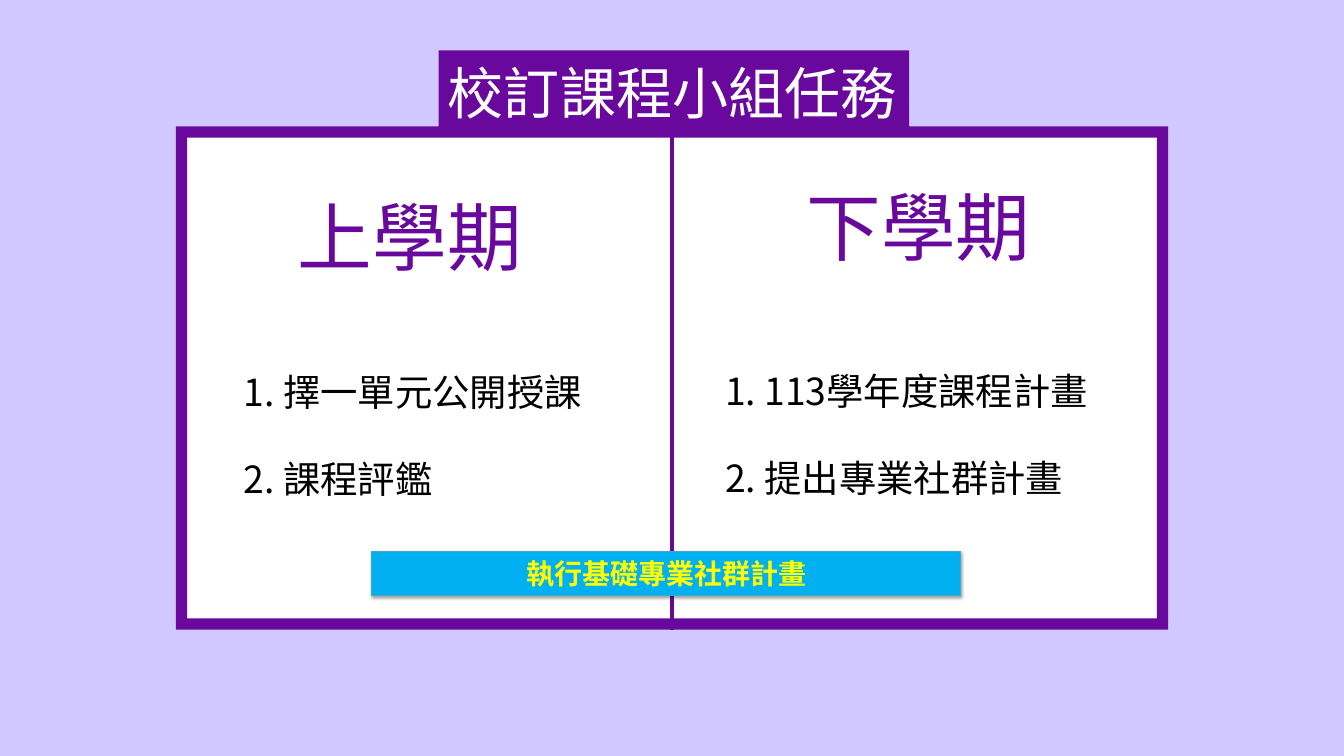
from lxml.etree import SubElement
from pptx import Presentation
from pptx.dml.color import RGBColor
from pptx.enum.shapes import MSO_CONNECTOR, MSO_SHAPE as Shape
from pptx.enum.text import MSO_ANCHOR as Anchor, PP_ALIGN as Align
from pptx.oxml import parse_xml
from pptx.oxml.ns import nsdecls, qn
from pptx.util import Pt

LILAC = RGBColor(0xD0, 0xC8, 0xFF)
PURPLE = RGBColor(0x69, 0x08, 0x9D)
WHITE = RGBColor(0xFF, 0xFF, 0xFF)
BLACK = RGBColor(0, 0, 0)
SKY = RGBColor(0x00, 0xB0, 0xF0)
TEAL = RGBColor(0x45, 0xA9, 0xC4)
YELLOW = RGBColor(0xFF, 0xFF, 0x00)
CJK = "Noto Sans CJK TC"

TITLE = "校訂課程小組任務"
SHARED_TASK = "執行基礎專業社群計畫"
SEMESTERS = [
    {"name": "上學期", "name_at": (319, 242), "tasks_at": (261.4, 395),
     "tasks": ["1. 擇一單元公開授課", "2. 課程評鑑"]},
    {"name": "下學期", "name_at": (864, 232), "tasks_at": (777, 394),
     "tasks": ["1. 113學年度課程計畫", "2. 提出專業社群計畫"]},
]

WIDTH, HEIGHT = 1440, 810
FRAME_WIDTH, FRAME_HEIGHT, FRAME_TOP, BORDER = 1063, 539, 135.5, 12
FRAME_LEFT = (WIDTH - FRAME_WIDTH) / 2

SHADOW = f"""<a:effectLst {nsdecls('a')}>
<a:outerShdw blurRad="39370" dist="20320" dir="5400000" rotWithShape="0">
<a:srgbClr val="000000"><a:alpha val="37000"/></a:srgbClr>
</a:outerShdw></a:effectLst>"""


def write(shape, lines, size, color, font=CJK, bold=False, align=Align.LEFT,
          anchor=Anchor.TOP, spacing=1.0, gap=0, margins=(0, 0)):
    frame = shape.text_frame
    frame.word_wrap = True
    frame.vertical_anchor = anchor
    frame.margin_left = frame.margin_right = Pt(margins[0])
    frame.margin_top = frame.margin_bottom = Pt(margins[1])
    for index, line in enumerate(lines):
        para = frame.add_paragraph() if index else frame.paragraphs[0]
        para.alignment = align
        para.line_spacing = spacing
        para.space_before = Pt(gap if index else 0)
        span = para.add_run()
        span.text = line
        span.font.size = Pt(size)
        span.font.bold = bold
        span.font.name = font
        span.font.color.rgb = color
        SubElement(span.font._element, qn("a:ea"), typeface=font)


def add_box(page, left, top, width, height):
    return page.shapes.add_textbox(Pt(left), Pt(top), Pt(width), Pt(height))


def add_block(page, kind, left, top, width, height, fill):
    block = page.shapes.add_shape(kind, Pt(left), Pt(top), Pt(width), Pt(height))
    block.shadow.inherit = False
    block.fill.solid()
    block.fill.fore_color.rgb = fill
    block.line.fill.background()
    return block


def add_divider(page, frame):
    divider = page.shapes.add_connector(MSO_CONNECTOR.STRAIGHT, 0, 0, 0, 0)
    divider.begin_connect(frame, 0)
    divider.end_connect(frame, 2)
    divider.line.color.rgb = PURPLE
    divider.line.width = Pt(5.25)
    SubElement(divider._element.spPr, qn("a:effectLst"))


def add_banner(page):
    banner = add_block(page, Shape.RECTANGLE, 398, 590.4, 631.5, 47.5, SKY)
    banner.line.color.rgb = TEAL
    banner.line.width = Pt(0.75)
    properties = banner._element.spPr
    properties.replace(properties.find(qn("a:effectLst")), parse_xml(SHADOW))
    write(banner, [SHARED_TASK], 30, YELLOW, font="Arial", bold=True,
          align=Align.CENTER, anchor=Anchor.MIDDLE, margins=(7.2, 3.6))


def main():
    deck = Presentation()
    deck.slide_width, deck.slide_height = Pt(WIDTH), Pt(HEIGHT)
    page = deck.slides.add_slide(deck.slide_layouts[6])
    page.background.fill.solid()
    page.background.fill.fore_color.rgb = LILAC

    add_block(page, Shape.RECTANGLE, FRAME_LEFT + BORDER / 2, FRAME_TOP + BORDER / 2,
              FRAME_WIDTH - BORDER, FRAME_HEIGHT - BORDER, WHITE)
    frame = add_block(page, Shape.FRAME, FRAME_LEFT, FRAME_TOP,
                      FRAME_WIDTH, FRAME_HEIGHT, PURPLE)
    frame.adjustments[0] = BORDER / FRAME_HEIGHT
    add_block(page, Shape.RECTANGLE, 470, 54, 504, 83, PURPLE)
    add_divider(page, frame)

    write(add_box(page, 435.6, 36, 568.8, 126), [TITLE], 60, WHITE,
          align=Align.CENTER, anchor=Anchor.MIDDLE, margins=(7.2, 3.6))
    for semester in SEMESTERS:
        write(add_box(page, *semester["name_at"], 340, 45), [semester["name"]],
              80, PURPLE, spacing=0.55)
        write(add_box(page, *semester["tasks_at"], 435, 165), semester["tasks"],
              40, BLACK, gap=46)
    add_banner(page)
    deck.save("out.pptx")


if __name__ == "__main__":
    main()
